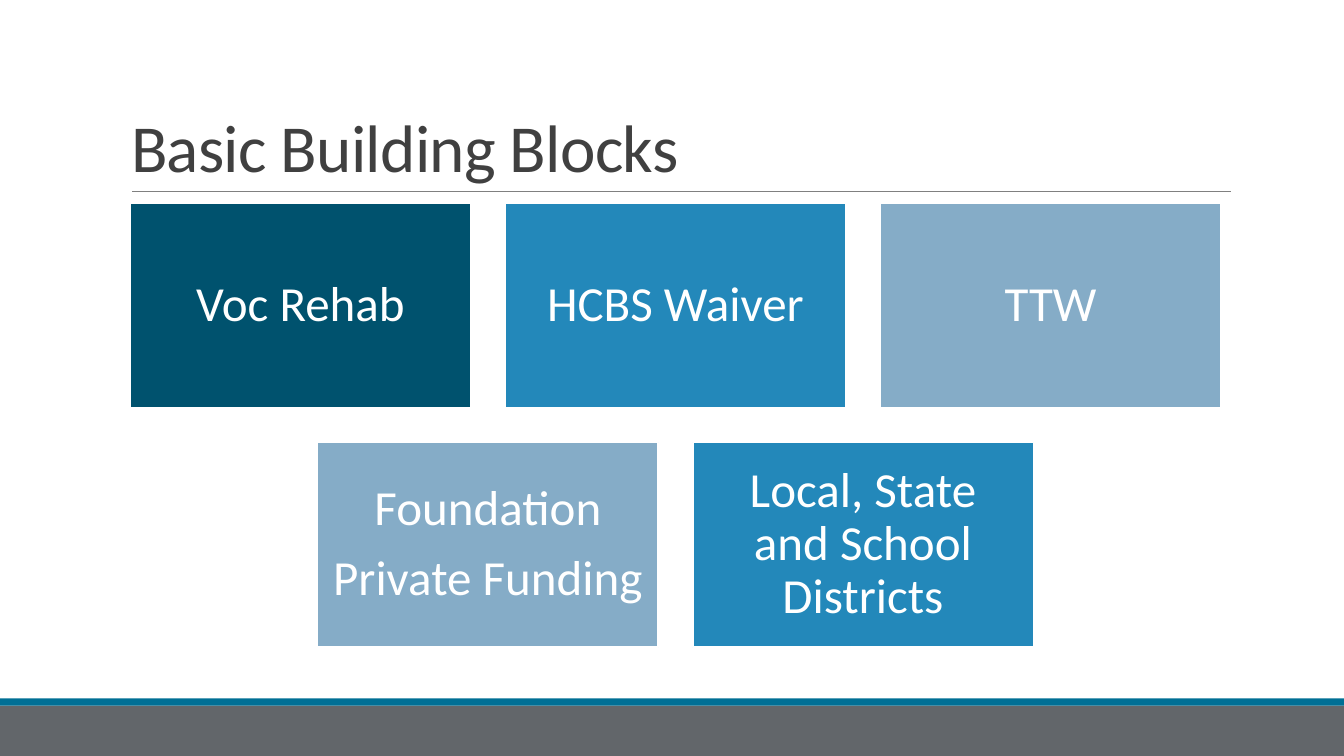
import pptx
import pptx.dml.color
import pptx.enum.shapes
import pptx.enum.text
import pptx.util
from lxml import etree
from pptx.oxml.ns import qn

Inches = pptx.util.Inches
Pt = pptx.util.Pt
RGBColor = pptx.dml.color.RGBColor
MSO_SHAPE = pptx.enum.shapes.MSO_SHAPE
PP_ALIGN = pptx.enum.text.PP_ALIGN
MSO_ANCHOR = pptx.enum.text.MSO_ANCHOR

NAVY = RGBColor(0x00, 0x52, 0x6E)
BLUE = RGBColor(0x23, 0x88, 0xBA)
PALE = RGBColor(0x85, 0xAC, 0xC7)
TEAL = RGBColor(0x00, 0x6F, 0x95)
SLATE = RGBColor(0x62, 0x66, 0x6A)
INK = RGBColor(0x40, 0x40, 0x40)
GRAY = RGBColor(0x80, 0x80, 0x80)
WHITE = RGBColor(0xFF, 0xFF, 0xFF)
FONT = "Calibri"

# Content: rows of blocks, each with its paragraphs and fill
TITLE = "Basic Building Blocks"
ROWS = [
    [(["Voc Rehab"], NAVY), (["HCBS Waiver"], BLUE), (["TTW"], PALE)],
    [(["Foundation", "Private Funding"], PALE),
     (["Local, State and School Districts"], BLUE)],
]

# Layout in inches: every row is centred on the same axis
SLIDE_W, SLIDE_H = 13.33, 7.5
BLOCK_W, BLOCK_H, GAP = 3.38, 2.03, 0.34
CENTER_X, TOP = 6.7, 2.02
INSET = 0.14


def add_rect(slide, x, y, w, h, fill):
    sp = slide.shapes.add_shape(MSO_SHAPE.RECTANGLE, Inches(x), Inches(y),
                                Inches(w), Inches(h))
    sp.shadow.inherit = False
    sp.fill.solid()
    sp.fill.fore_color.rgb = fill
    sp.line.fill.background()
    return sp


def format_run(r, size, color):
    r.font.name = FONT
    r.font.size = Pt(size)
    r.font.color.rgb = color


def add_block(slide, x, y, lines, fill):
    sp = add_rect(slide, x, y, BLOCK_W, BLOCK_H, fill)
    sp.line.color.rgb = WHITE
    sp.line.width = Pt(1.25)
    tf = sp.text_frame
    tf.word_wrap = True
    tf.vertical_anchor = MSO_ANCHOR.MIDDLE
    tf.margin_left = tf.margin_right = Inches(INSET)
    tf.margin_top = tf.margin_bottom = Inches(INSET)
    tf.text = "\n".join(lines)
    for p in tf.paragraphs:
        p.alignment = PP_ALIGN.CENTER
        p.line_spacing = 0.9
        format_run(p.runs[0], 35, WHITE)
    for p in tf.paragraphs[:-1]:
        p.space_after = Pt(12.25)


prs = pptx.Presentation()
prs.slide_width = Inches(SLIDE_W)
prs.slide_height = Inches(SLIDE_H)
slide = prs.slides.add_slide(prs.slide_layouts[5])

# Footer bands
add_rect(slide, 0, 7, SLIDE_W, 0.5, SLATE)
add_rect(slide, 0, 6.93, SLIDE_W, 0.07, TEAL)

# Title and the rule below it
title = slide.shapes.title
title.left, title.top = Inches(1.2), Inches(0.31)
title.width, title.height = Inches(11), Inches(1.59)
tf = title.text_frame
tf.text = TITLE
tf.word_wrap = True
tf.vertical_anchor = MSO_ANCHOR.BOTTOM
p = tf.paragraphs[0]
p.alignment = PP_ALIGN.LEFT
p.line_spacing = 0.85
format_run(p.runs[0], 48, INK)
p.runs[0].font._element.set("spc", "-50")

rule = slide.shapes.add_connector(pptx.enum.shapes.MSO_CONNECTOR.STRAIGHT,
                                  Inches(1.31), Inches(1.9), Inches(12.21), Inches(1.9))
rule.line.color.rgb = GRAY
rule.line.width = Pt(0.5)
etree.SubElement(rule._element.spPr, qn("a:effectLst"))

# Building blocks
for i, row in enumerate(ROWS):
    row_w = len(row) * (BLOCK_W + GAP) - GAP
    for j, (lines, fill) in enumerate(row):
        x = CENTER_X - row_w / 2 + j * (BLOCK_W + GAP)
        add_block(slide, x, TOP + i * (BLOCK_H + GAP), lines, fill)

prs.save("out.pptx")
